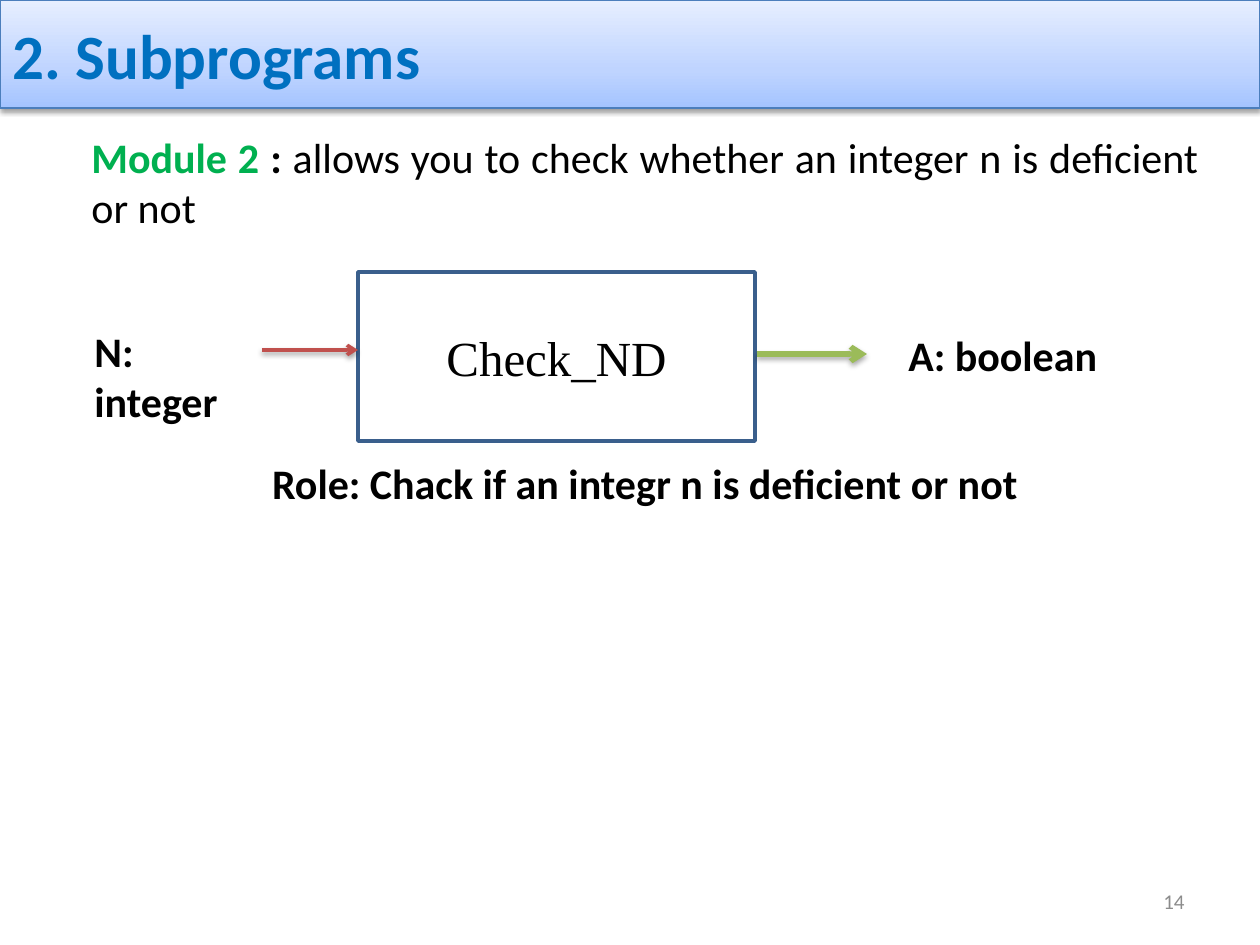
from dataclasses import dataclass

from lxml.etree import SubElement
from pptx import Presentation
from pptx.dml.color import RGBColor
from pptx.enum.shapes import MSO_CONNECTOR, MSO_SHAPE
from pptx.enum.text import MSO_ANCHOR, MSO_AUTO_SIZE, PP_ALIGN
from pptx.oxml import parse_xml
from pptx.oxml.ns import nsdecls, qn
from pptx.util import Emu, Pt


@dataclass(frozen=True)
class Theme:
    title: str = "0070C0"
    module: str = "00B050"
    ink: str = "000000"
    muted: str = "8C8C8C"
    banner_line: str = "4B7EBC"
    box_line: str = "3A5F8C"
    input_arrow: str = "C0504D"
    output_arrow: str = "9BBB59"
    banner_stops: tuple = ((0, "A4C4FF"), (35, "BFD4FF"), (100, "E6EEFF"))
    font: str = "Calibri"
    box_font: str = "Times New Roman"
    title_size: int = 36
    box_size: int = 28
    text_size: int = 24
    number_size: int = 12


theme = Theme()
PX = 914400 / 126  # EMU in one px


def px(*lengths):
    return [Emu(round(length * PX)) for length in lengths]


def style(span, size=theme.text_size, color=theme.ink, bold=True, name=theme.font):
    span.font.size, span.font.bold, span.font.name = Pt(size), bold, name
    span.font.color.rgb = RGBColor.from_string(color)


deck = Presentation()
deck.slide_width, deck.slide_height = px(1260, 945)
page = deck.slides.add_slide(deck.slide_layouts[5])

# Title banner
banner = page.shapes.title
banner.left, banner.top, banner.width, banner.height = px(0, 0, 1260, 108)
banner.text_frame.text = "2. Subprograms"
banner.text_frame.auto_size = MSO_AUTO_SIZE.NONE
banner.text_frame.vertical_anchor = MSO_ANCHOR.MIDDLE
para = banner.text_frame.paragraphs[0]
para.alignment = PP_ALIGN.LEFT
style(para.runs[0], theme.title_size, theme.title)
stops = "".join(
    f'<a:gs pos="{place * 1000}"><a:srgbClr val="{color}"/></a:gs>'
    for place, color in theme.banner_stops
)
banner.element.spPr.append(parse_xml(
    f'<a:gradFill {nsdecls("a")}><a:gsLst>{stops}</a:gsLst>'
    '<a:lin ang="16200000" scaled="0"/></a:gradFill>'
))
banner.line.color.rgb = RGBColor.from_string(theme.banner_line)
banner.line.width = Pt(0.75)

# Module description and role
body = page.shapes.add_textbox(*px(29, 125, 1182, 767)).text_frame
body.word_wrap = True
description = body.paragraphs[0]
description.alignment = PP_ALIGN.JUSTIFY
description.space_after = Pt(6)
for text, color, bold in (
    ("Module 2 ", theme.module, True),
    (": ", theme.ink, True),
    ("allows you to check whether an integer n is deficient or not", theme.ink, False),
):
    span = description.add_run()
    span.text = text
    style(span, color=color, bold=bold)
role = body.add_paragraph()
role.text = "Role: Chack if an integr n is deficient or not"
role.alignment = PP_ALIGN.CENTER
role.space_before = Pt(123)
style(role.runs[0])
for para in body.paragraphs:
    para._p.get_or_add_pPr().set("marL", str(px(50)[0]))

# Module box
box = page.shapes.add_shape(MSO_SHAPE.RECTANGLE, *px(358, 272, 397, 169))
box.shadow.inherit = False
box.fill.background()
box.line.color.rgb = RGBColor.from_string(theme.box_line)
box.line.width = Pt(2)
box.text_frame.text = "Check_ND"
box.text_frame.vertical_anchor = MSO_ANCHOR.MIDDLE
para = box.text_frame.paragraphs[0]
para.alignment = PP_ALIGN.CENTER
style(para.runs[0], theme.box_size, bold=False, name=theme.box_font)

# Output and input arrows
arrows = []
for start, end, y, color, width in (
    (757, 867, 354, theme.output_arrow, 3),
    (262, 358, 350, theme.input_arrow, 2),
):
    arrow = page.shapes.add_connector(MSO_CONNECTOR.STRAIGHT, *px(start, y, end, y))
    arrow.line.color.rgb = RGBColor.from_string(color)
    arrow.line.width = Pt(width)
    SubElement(arrow.line._get_or_add_ln(), qn("a:tailEnd"), type="arrow")
    arrows.append(arrow)

# Soft shadows below the banner and the arrows
for shape, distance, alpha in zip((banner, *arrows), (20000, 23000, 20000), (38, 35, 38)):
    shape.element.spPr.append(parse_xml(
        f'<a:effectLst {nsdecls("a")}><a:outerShdw blurRad="40000" dist="{distance}" '
        'dir="5400000" rotWithShape="0"><a:srgbClr val="000000">'
        f'<a:alpha val="{alpha * 1000}"/></a:srgbClr></a:outerShdw></a:effectLst>'
    ))

# Output and input labels
for text, left, top, width, wrap in (
    ("A: boolean", 896, 323, 214, False),
    ("N: integer", 82, 319, 180, True),
):
    label = page.shapes.add_textbox(*px(left, top, width, 63)).text_frame
    label.word_wrap = wrap
    label.text = text
    style(label.paragraphs[0].runs[0])

# Slide number
number = page.shapes.add_textbox(*px(903, 876, 294, 50)).text_frame
number.word_wrap = True
number.vertical_anchor = MSO_ANCHOR.MIDDLE
number.text = "14"
number.paragraphs[0].alignment = PP_ALIGN.RIGHT
style(number.paragraphs[0].runs[0], theme.number_size, theme.muted, bold=False)

deck.save("out.pptx")
